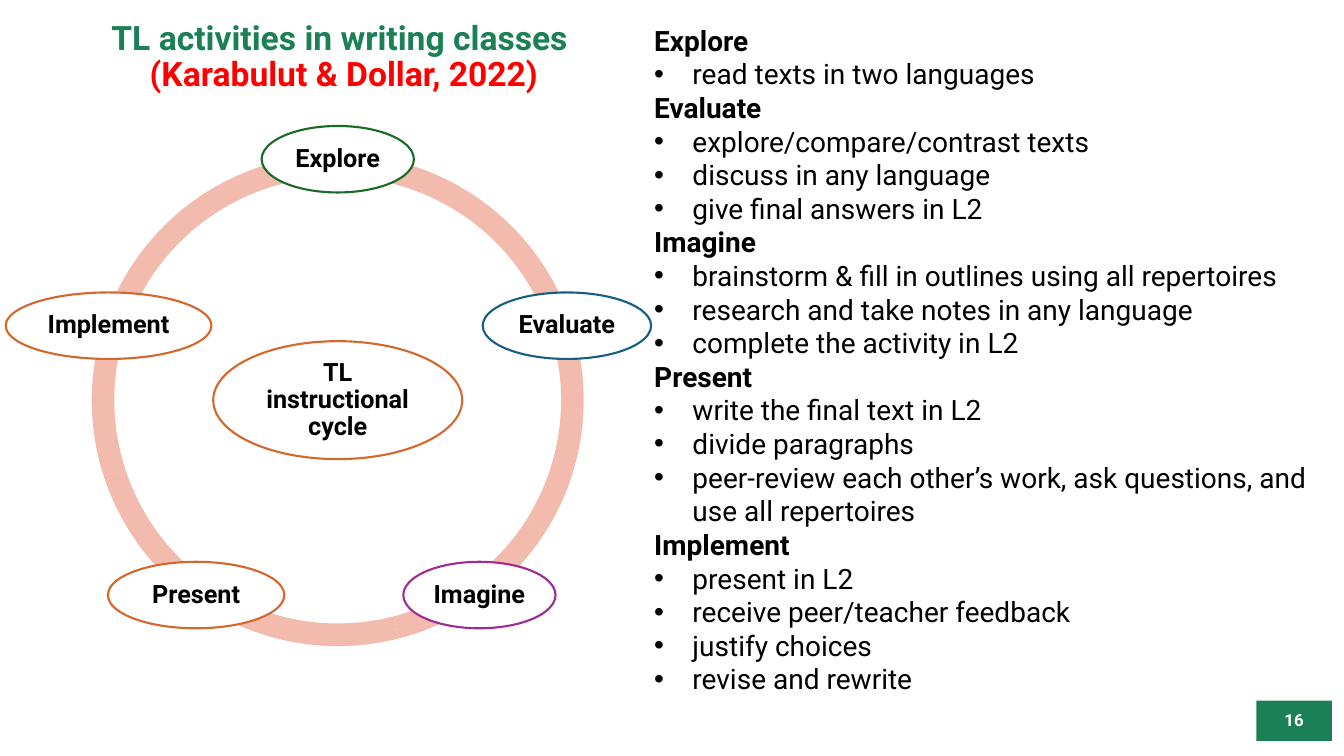
import math
from dataclasses import dataclass

from lxml import etree
from pptx import Presentation
from pptx import util as u
from pptx.dml.color import RGBColor
from pptx.enum import shapes, text
from pptx.oxml.ns import qn


@dataclass(frozen=True)
class Theme:
    font: str = "Roboto"
    green: str = "1B8056"
    red: str = "FF0000"
    black: str = "000000"
    white: str = "FFFFFF"
    ring: str = "F2BBAE"
    orange: str = "D3672D"
    leaf: str = "196B24"
    blue: str = "156082"
    purple: str = "A02B93"
    title_size: int = 24
    list_size: int = 20
    node_size: int = 18
    number_size: int = 12


THEME = Theme()

# Content: stage, oval width, oval outline, activities
STAGES = [
    ("Explore", 1.51, THEME.leaf, ["read texts in two languages"]),
    ("Evaluate", 1.67, THEME.blue, [
        "explore/compare/contrast texts",
        "discuss in any language",
        "give final answers in L2"]),
    ("Imagine", 1.51, THEME.purple, [
        "brainstorm & fill in outlines using all repertoires",
        "research and take notes in any language",
        "complete the activity in L2"]),
    ("Present", 1.75, THEME.orange, [
        "write the final text in L2",
        "divide paragraphs",
        "peer-review each other’s work, ask questions, and use all repertoires"]),
    ("Implement", 2.04, THEME.orange, [
        "present in L2",
        "receive peer/teacher feedback",
        "justify choices",
        "revise and rewrite"]),
]

# Cycle geometry: centre, ring diameter, distance of the ovals from the centre
CENTER_X, CENTER_Y = 3.35, 3.97
RING_SIZE, ORBIT = 4.88, 2.39
OVAL_HEIGHT = 0.66
ARC_ENDS = [205.2, 162, 118.8, 75.6, 32.4]


def add_span(para, content, size, color=THEME.black, bold=False):
    span = para.add_run()
    span.text = content
    span.font.name = THEME.font
    span.font.size = u.Pt(size)
    span.font.bold = bold
    span.font.color.rgb = RGBColor.from_string(color)
    return span


def add_bullet(para, indent):
    properties = para._p.get_or_add_pPr()
    properties.set("marL", str(u.Inches(indent)))
    properties.set("indent", str(-u.Inches(indent)))
    etree.SubElement(properties, qn("a:buFont")).set("typeface", "Arial")
    etree.SubElement(properties, qn("a:buChar")).set("char", "•")


class Slide:
    def __init__(self, deck, theme):
        self.theme = theme
        self.page = deck.slides.add_slide(deck.slide_layouts[5])

    def title(self, heading, citation, left, top, width, height):
        box = self.page.shapes.title
        box.left, box.top = u.Inches(left), u.Inches(top)
        box.width, box.height = u.Inches(width), u.Inches(height)
        frame = box.text_frame
        frame.auto_size = text.MSO_AUTO_SIZE.NONE
        frame.vertical_anchor = text.MSO_ANCHOR.MIDDLE
        para = frame.paragraphs[0]
        para.alignment = text.PP_ALIGN.CENTER
        para.line_spacing = 0.9
        add_span(para, heading, self.theme.title_size, self.theme.green, bold=True)
        para.add_line_break()
        add_span(para, citation, self.theme.title_size, self.theme.red, bold=True)

    def shape(self, kind, left, top, width, height, fill, outline=None):
        box = self.page.shapes.add_shape(
            kind, u.Inches(left), u.Inches(top), u.Inches(width), u.Inches(height))
        box.shadow.inherit = False
        box.fill.solid()
        box.fill.fore_color.rgb = RGBColor.from_string(fill)
        if outline:
            box.line.color.rgb = RGBColor.from_string(outline)
            box.line.width = u.Pt(1.5)
        else:
            box.line.fill.background()
        return box

    def label(self, box, content, size, color, inset=0.03):
        frame = box.text_frame
        frame.word_wrap = True
        frame.vertical_anchor = text.MSO_ANCHOR.MIDDLE
        frame.margin_left = frame.margin_right = u.Inches(inset)
        frame.margin_top = frame.margin_bottom = u.Inches(inset)
        para = frame.paragraphs[0]
        para.alignment = text.PP_ALIGN.CENTER
        para.line_spacing = 0.9
        add_span(para, content, size, color, bold=True)

    def arc(self, start, end):
        box = self.shape(
            shapes.MSO_SHAPE.BLOCK_ARC, CENTER_X - RING_SIZE / 2,
            CENTER_Y - RING_SIZE / 2, RING_SIZE, RING_SIZE, self.theme.ring)
        # Angles are stored in 1/60000 degree and scaled by 100000
        box.adjustments[0] = start * 0.6
        box.adjustments[1] = end * 0.6
        box.adjustments[2] = 0.046

    def oval(self, content, x, y, width, height, outline):
        box = self.shape(
            shapes.MSO_SHAPE.OVAL, x - width / 2, y - height / 2,
            width, height, self.theme.white, outline)
        self.label(box, content, self.theme.node_size, self.theme.black)

    def activities(self, stages, left, top, width, height):
        box = self.page.shapes.add_textbox(
            u.Inches(left), u.Inches(top), u.Inches(width), u.Inches(height))
        frame = box.text_frame
        frame.word_wrap = True
        frame.auto_size = text.MSO_AUTO_SIZE.SHAPE_TO_FIT_TEXT
        frame.vertical_anchor = text.MSO_ANCHOR.MIDDLE
        for index, (stage, _, _, items) in enumerate(stages):
            para = frame.add_paragraph() if index else frame.paragraphs[0]
            add_span(para, stage, self.theme.list_size, bold=True)
            for item in items:
                para = frame.add_paragraph()
                add_bullet(para, 0.38)
                add_span(para, item, self.theme.list_size)

    def page_number(self, number, left, top, width, height):
        box = self.shape(
            shapes.MSO_SHAPE.RECTANGLE, left, top, width, height, self.theme.green)
        self.label(box, number, self.theme.number_size, self.theme.white)


def main():
    deck = Presentation()
    deck.slide_width, deck.slide_height = u.Inches(13.33), u.Inches(7.5)
    slide = Slide(deck, THEME)

    # Title and page number
    slide.title("TL activities in writing classes ", "(Karabulut & Dollar, 2022)",
                0.58, 0.11, 5.66, 0.93)
    slide.page_number("16", 12.46, 6.95, 0.75, 0.4)

    # Ring: each arc runs from one end angle to the previous one
    for index, end in enumerate(ARC_ENDS):
        slide.arc(ARC_ENDS[(index + 1) % len(ARC_ENDS)], end)

    # Ovals: the hub, then the stages clockwise from the top
    slide.oval("TL instructional cycle", CENTER_X, CENTER_Y, 2.47, 1.17, THEME.orange)
    for index, (stage, width, outline, _) in enumerate(STAGES):
        angle = 2 * math.pi * index / len(STAGES)
        slide.oval(stage, CENTER_X + ORBIT * math.sin(angle),
                   CENTER_Y - ORBIT * math.cos(angle), width, OVAL_HEIGHT, outline)

    # Activities of each stage
    slide.activities(STAGES, 6.39, 0.15, 6.94, 6.83)

    deck.save("out.pptx")


if __name__ == "__main__":
    main()
